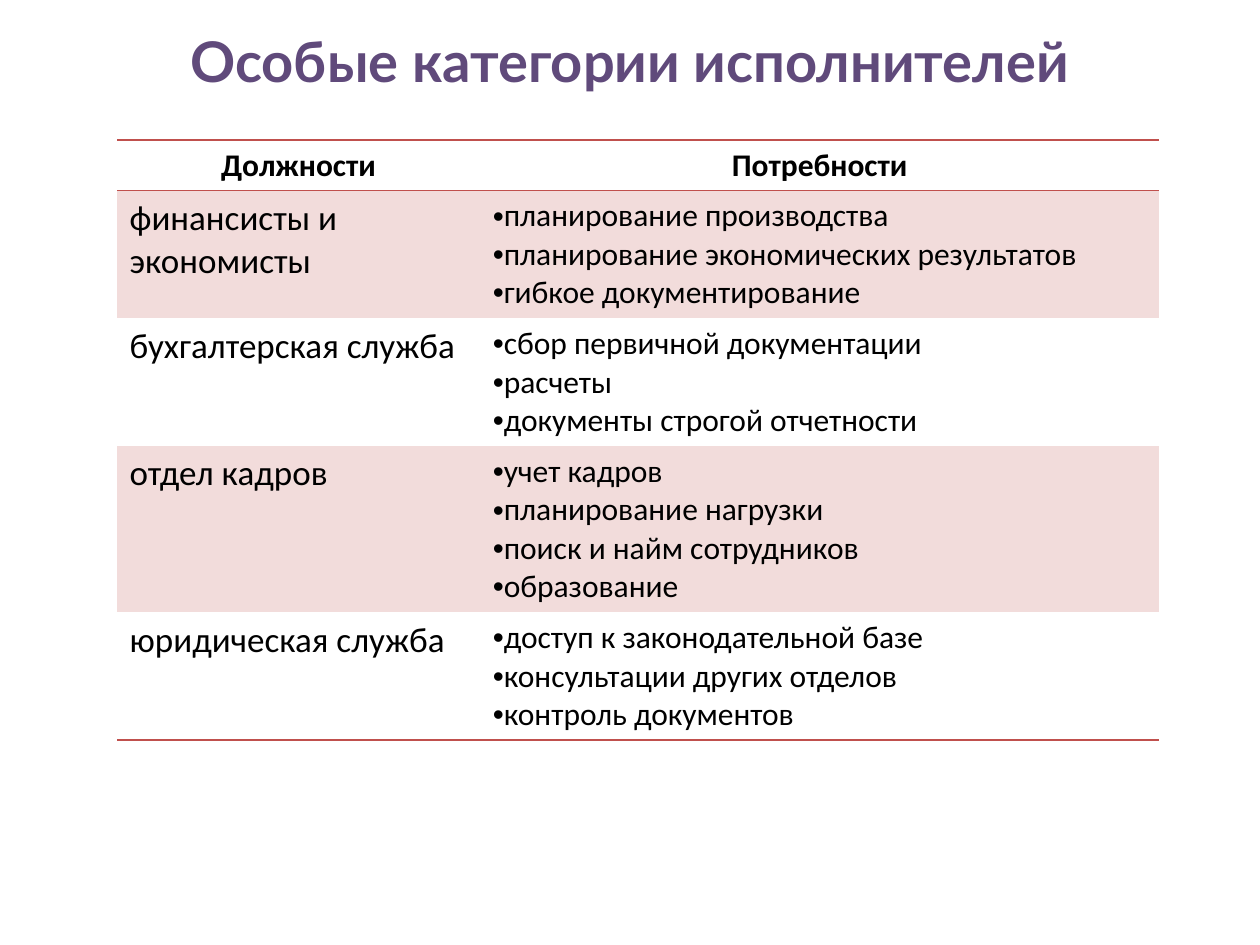
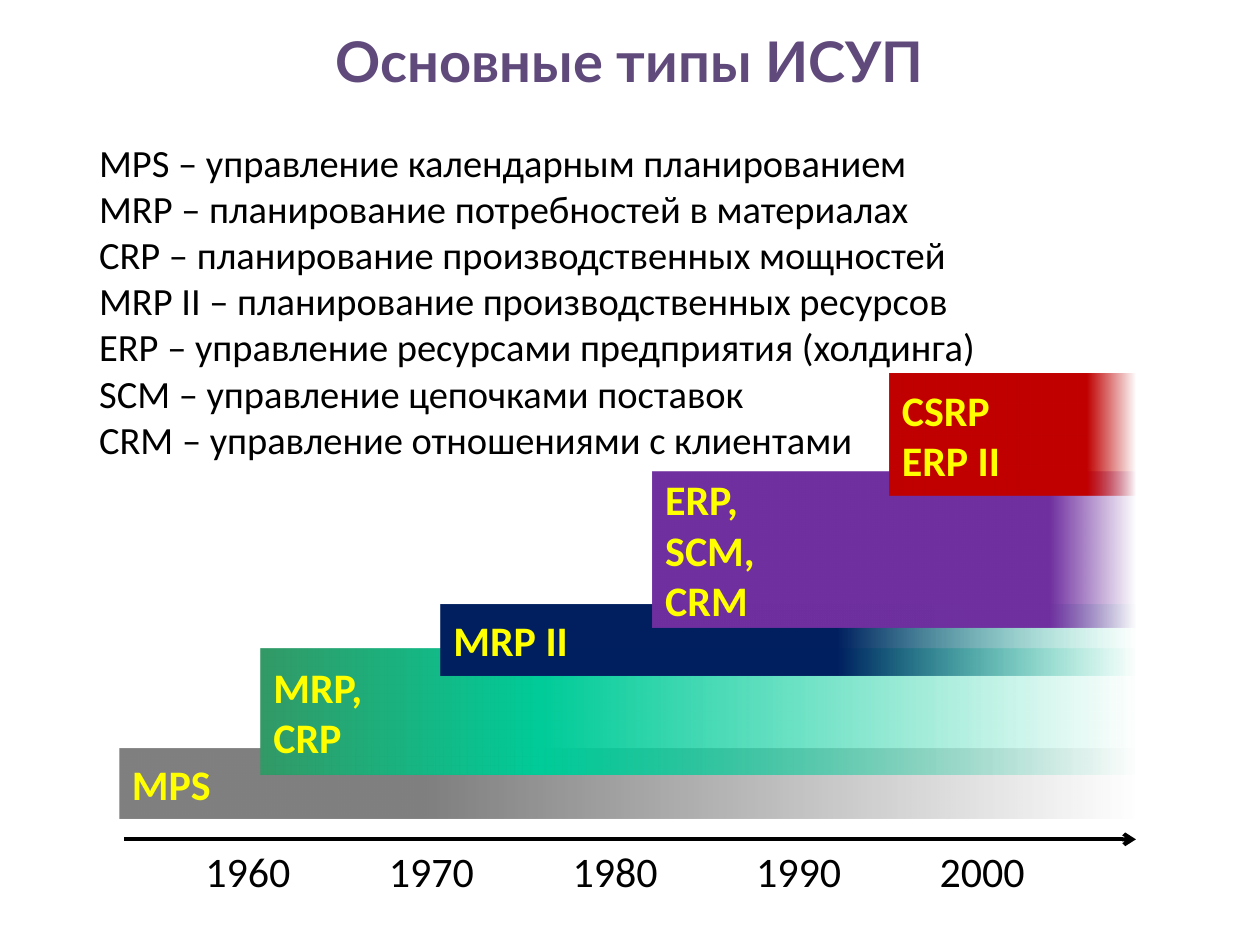
"""Build two slides: staff categories and the timeline of management system types."""
from dataclasses import dataclass

from lxml.etree import SubElement
from pptx import Presentation
from pptx.dml.color import RGBColor
from pptx.enum.shapes import MSO_CONNECTOR, MSO_SHAPE
from pptx.enum.text import MSO_ANCHOR, MSO_AUTO_SIZE, PP_ALIGN
from pptx.oxml.ns import qn
from pptx.util import Cm, Pt

STAFF_TITLE = "Особые категории исполнителей"
STAFF_HEADER = ["Должности", "Потребности"]
STAFF_NEEDS = [
    ("финансисты и экономисты",
     ["планирование производства", "планирование экономических результатов", "гибкое документирование"]),
    ("бухгалтерская служба",
     ["сбор первичной документации", "расчеты", "документы строгой отчетности"]),
    ("отдел кадров",
     ["учет кадров", "планирование нагрузки", "поиск и найм сотрудников", "образование"]),
    ("юридическая служба",
     ["доступ к законодательной базе", "консультации других отделов", "контроль документов"]),
]

TYPES_TITLE = "Основные типы ИСУП"
ABBREVIATIONS = [
    "MPS – управление календарным планированием",
    "MRP – планирование потребностей в материалах",
    "CRP – планирование производственных мощностей",
    "MRP II – планирование производственных ресурсов",
    "ERP – управление ресурсами предприятия (холдинга)",
    "SCM – управление цепочками поставок",
    "CRM – управление отношениями с клиентами",
]
# lines, left, top, height, (start, middle, faded end) colours, middle stop percent
SYSTEM_BANDS = [
    (["MPS"], 2.41, 15.09, 1.42, ("808080", "808080", "808080"), 30),
    (["MRP,", "CRP"], 5.26, 13.08, 2.54, ("339966", "00CC99", "00CC99"), 32),
    (["MRP II"], 8.89, 12.19, 1.42, ("002060", "002060", "00CC99"), 57),
    (["ERP,", "SCM,", "CRM"], 13.16, 9.5, 3.15, ("7030A0", "7030A0", "7030A0"), 82),
    (["CSRP", "ERP II"], 17.93, 7.54, 2.44, ("C00000", "C00000", "C00000"), 80),
]
YEARS = ["1960", "1970", "1980", "1990", "2000"]


@dataclass(frozen=True)
class Theme:
    title_font: str = "Lato"
    body_font: str = "Calibri"
    title_color: str = "604A7B"
    text_color: str = "000000"
    band_text: str = "FFFF00"
    rule_color: str = "C0504D"
    stripe_color: str = "F2DCDB"
    title_size: int = 32
    label_size: int = 24
    legend_size: int = 22
    position_size: int = 20
    table_size: int = 18


THEME = Theme()
TIMELINE_RIGHT = 22.9
AXIS_TOP = 16.92


def write(frame, lines, *, size, color=THEME.text_color, font=THEME.body_font,
          bold=False, align=PP_ALIGN.LEFT, bullet=None):
    for index, line in enumerate(lines):
        paragraph = frame.paragraphs[0] if index == 0 else frame.add_paragraph()
        paragraph.alignment = align
        if bullet:
            properties = paragraph._p.get_or_add_pPr()
            SubElement(properties, qn("a:buFont"), typeface="Arial")
            SubElement(properties, qn("a:buChar"), char=bullet)
        run = paragraph.add_run()
        run.text = line
        run.font.size = Pt(size)
        run.font.name = font
        run.font.bold = bold
        run.font.color.rgb = RGBColor.from_string(color)


def add_text(slide, lines, left, top, width, height, *, grow=False, **text_format):
    frame = slide.shapes.add_textbox(Cm(left), Cm(top), Cm(width), Cm(height)).text_frame
    frame.word_wrap = True
    if grow:
        frame.auto_size = MSO_AUTO_SIZE.SHAPE_TO_FIT_TEXT
    write(frame, lines, **text_format)


def add_titled_slide(presentation, title):
    slide = presentation.slides.add_slide(presentation.slide_layouts[6])
    add_text(slide, [title], 1.27, 0.41, 22.86, 2.97, size=THEME.title_size,
             color=THEME.title_color, font=THEME.title_font, bold=True, align=PP_ALIGN.CENTER)
    return slide


def add_color(parent, color, alpha=None):
    element = SubElement(parent, qn("a:srgbClr"), val=color)
    if alpha is not None:
        SubElement(element, qn("a:alpha"), val=str(alpha))


def style_cell(cell, border_sides, striped):
    properties = cell._tc.get_or_add_tcPr()
    for side in border_sides:
        border = SubElement(properties, qn(f"a:ln{side}"), w=str(Pt(1)))
        add_color(SubElement(border, qn("a:solidFill")), THEME.rule_color)
    if striped:
        cell.fill.solid()
        cell.fill.fore_color.rgb = RGBColor.from_string(THEME.stripe_color)
    else:
        cell.fill.background()


def add_staff_table(slide):
    column_widths = [7.32, 13.69]
    row_heights = [0.25 + 0.775 * count for count in [1] + [len(needs) for _, needs in STAFF_NEEDS]]
    table = slide.shapes.add_table(len(row_heights), len(column_widths), Cm(2.36), Cm(2.82),
                                   Cm(sum(column_widths)), Cm(sum(row_heights))).table
    table.first_row = table.horz_banding = False
    table._tbl.tblPr.find(qn("a:tableStyleId")).text = "{2D5ABB26-0587-4C30-8999-92F81FD0307C}"
    for column, width in zip(table.columns, column_widths):
        column.width = Cm(width)
    for index, (row, height) in enumerate(zip(table.rows, row_heights)):
        row.height = Cm(height)
        sides = "TB" if index == 0 else "B" if index == len(STAFF_NEEDS) else ""
        for cell in row.cells:
            style_cell(cell, sides, striped=index % 2 == 1)
    for cell, heading in zip(table.rows[0].cells, STAFF_HEADER):
        write(cell.text_frame, [heading], size=THEME.table_size, bold=True, align=PP_ALIGN.CENTER)
    for index, (position, needs) in enumerate(STAFF_NEEDS, start=1):
        write(table.cell(index, 0).text_frame, [position], size=THEME.position_size)
        write(table.cell(index, 1).text_frame, needs, size=THEME.table_size, bullet="•")


def fade_fill(shape, colors, middle):
    shape.fill.gradient()
    shape.fill.gradient_angle = 0
    stops = shape._element.spPr.find(qn("a:gradFill")).find(qn("a:gsLst"))
    for stop in list(stops):
        stops.remove(stop)
    for color, percent, alpha in zip(colors, (0, middle, 100), (None, None, 0)):
        add_color(SubElement(stops, qn("a:gs"), pos=str(percent * 1000)), color, alpha)


def add_system_band(slide, lines, left, top, height, colors, middle):
    shape = slide.shapes.add_shape(MSO_SHAPE.RECTANGLE, Cm(left), Cm(top),
                                   Cm(TIMELINE_RIGHT - left), Cm(height))
    shape.shadow.inherit = False
    fade_fill(shape, colors, middle)
    shape.line.fill.background()
    shape.text_frame.word_wrap = True
    shape.text_frame.vertical_anchor = MSO_ANCHOR.MIDDLE
    write(shape.text_frame, lines, size=THEME.label_size, color=THEME.band_text, bold=True)


def add_time_axis(slide):
    axis = slide.shapes.add_connector(MSO_CONNECTOR.STRAIGHT, Cm(2.51), Cm(AXIS_TOP),
                                      Cm(TIMELINE_RIGHT), Cm(AXIS_TOP))
    axis.line.width = Pt(2.25)
    axis.line.color.rgb = RGBColor.from_string(THEME.text_color)
    SubElement(axis.line._get_or_add_ln(), qn("a:tailEnd"), type="arrow")
    SubElement(axis._element.spPr, qn("a:effectLst"))
    for index, year in enumerate(YEARS):
        add_text(slide, [year], 3.78 + 3.7 * index, AXIS_TOP, 2.44, 1.27, grow=True,
                 size=THEME.label_size, align=PP_ALIGN.CENTER)


def main():
    presentation = Presentation()
    presentation.slide_width, presentation.slide_height = Cm(25.4), Cm(19.05)

    add_staff_table(add_titled_slide(presentation, STAFF_TITLE))

    types_slide = add_titled_slide(presentation, TYPES_TITLE)
    add_text(types_slide, ABBREVIATIONS, 1.75, 2.67, 18.87, 6.83, grow=True,
             size=THEME.legend_size, align=PP_ALIGN.JUSTIFY)
    for band in SYSTEM_BANDS:
        add_system_band(types_slide, *band)
    add_time_axis(types_slide)

    presentation.save("out.pptx")


if __name__ == "__main__":
    main()
